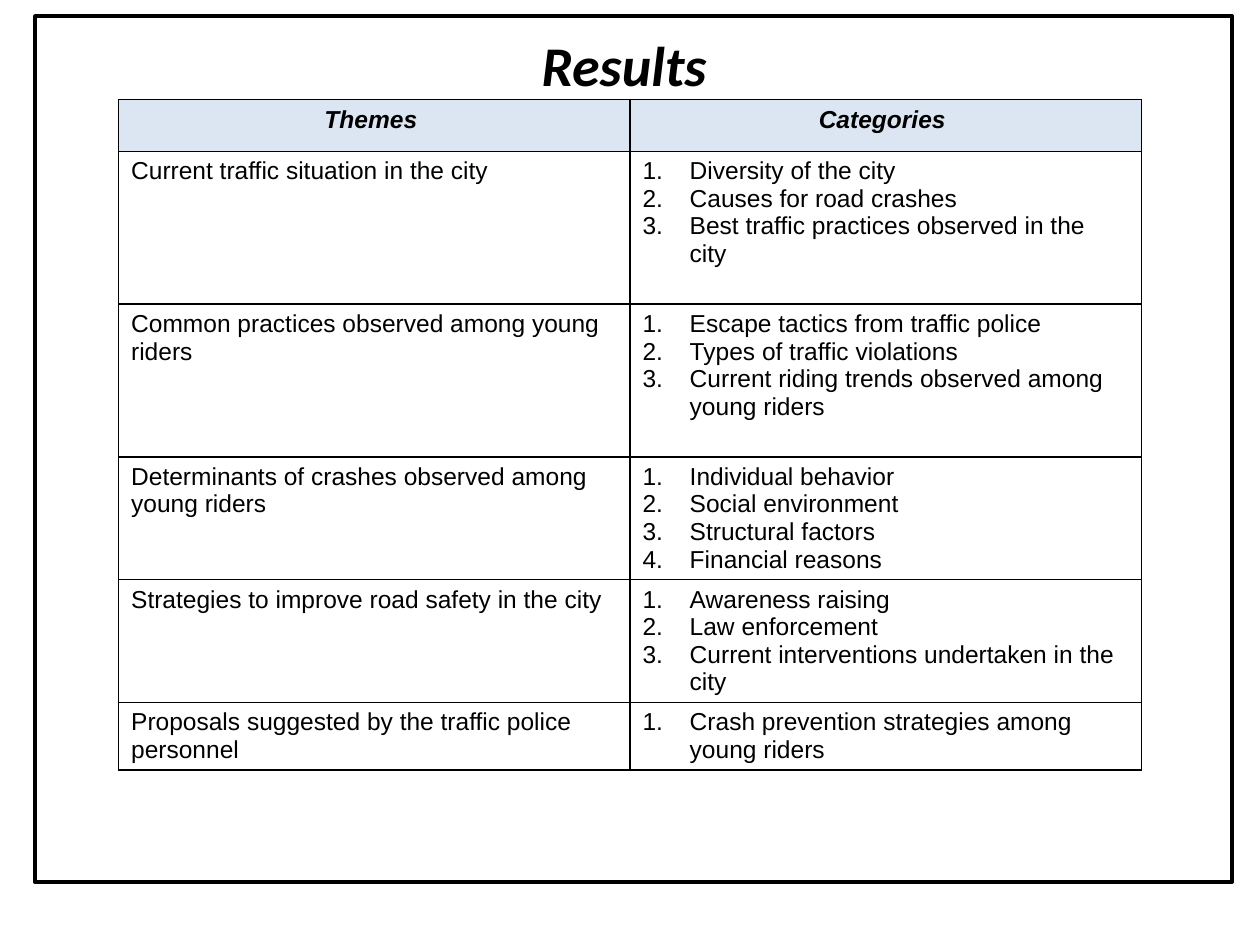
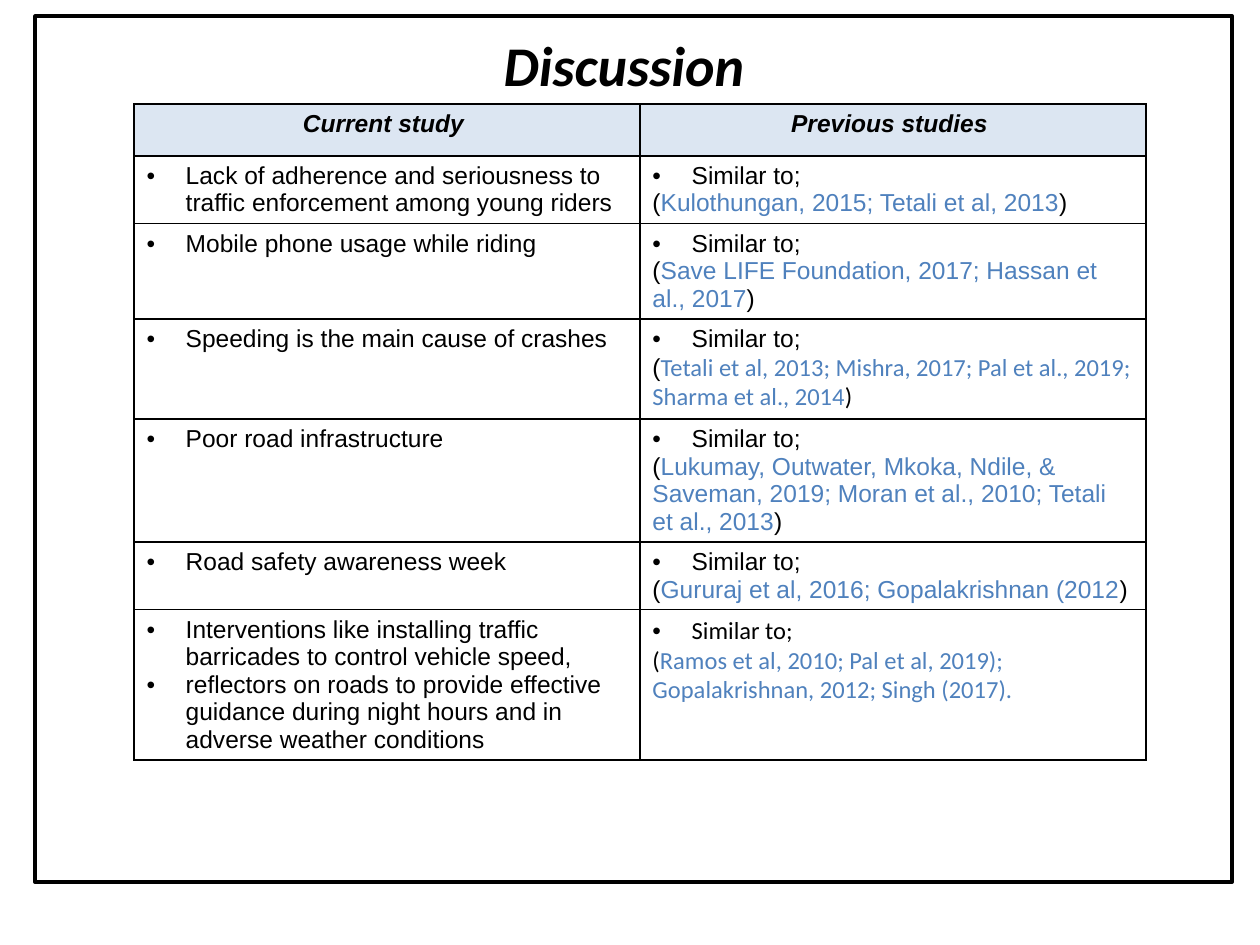
from dataclasses import dataclass

from lxml import etree
from pptx import Presentation
from pptx.dml.color import RGBColor
from pptx.enum.shapes import MSO_SHAPE
from pptx.enum.text import MSO_ANCHOR, MSO_AUTO_SIZE, PP_ALIGN
from pptx.oxml.ns import qn
from pptx.util import Cm, Pt

RECTANGLE = MSO_SHAPE.RECTANGLE
MIDDLE = MSO_ANCHOR.MIDDLE
NO_AUTOFIT = MSO_AUTO_SIZE.NONE
CENTER = PP_ALIGN.CENTER
LEFT = PP_ALIGN.LEFT
TITLE_ONLY = 5


@dataclass(frozen=True)
class Theme:
    ink: RGBColor = RGBColor(0x00, 0x00, 0x00)
    citation: RGBColor = RGBColor(0x4F, 0x81, 0xBD)
    header: RGBColor = RGBColor(0xDC, 0xE6, 0xF2)
    title_font: str = "Calibri"
    body_font: str = "Arial"
    title_size: Pt = Pt(32)
    body_size: Pt = Pt(14)
    frame_line: Pt = Pt(2.25)
    cell_line: Pt = Pt(1)


@dataclass(frozen=True)
class ListStyle:
    tag: str
    attributes: dict
    indent: Cm


THEME = Theme()
NUMBERED = ListStyle("a:buAutoNum", {"type": "arabicPeriod"}, Cm(0.95))
BULLETED = ListStyle("a:buChar", {"char": "•"}, Cm(0.79))
EMPHASIS = {"bold": True, "italic": True}
CITED = {"color": THEME.citation}
CALIBRI = {"name": THEME.title_font}


def plain(*texts):
    return [(None, [(text, {})]) for text in texts]


def numbered(*texts):
    return [(NUMBERED, [(text, {})]) for text in texts]


def bulleted(*texts):
    return [(BULLETED, [(text, {})]) for text in texts]


def similar(citation, opening={}, cited={}, closing=")"):
    spans = [("(", opening), (citation, CITED | cited)]
    if closing:
        spans.append((closing, cited))
    return [(BULLETED, [("Similar to;", opening)]), (None, spans)]


class DeckBuilder:
    def __init__(self, theme):
        self.theme = theme
        self.deck = Presentation()
        self.deck.slide_width = Cm(25.4)
        self.deck.slide_height = Cm(19.05)
        self.page = None

    def start_page(self, title):
        self.page = self.deck.slides.add_slide(self.deck.slide_layouts[TITLE_ONLY])
        self.frame()
        self.title(title)

    def frame(self):
        frame = self.page.shapes.add_shape(
            RECTANGLE, Cm(0.71), Cm(0.33), Cm(24.13), Cm(17.45)
        )
        frame.shadow.inherit = False
        frame.fill.background()
        frame.line.color.rgb = self.theme.ink
        frame.line.width = self.theme.frame_line

    def title(self, text):
        box = self.page.shapes.title
        place = {"left": Cm(0.71), "top": Cm(0.53), "width": Cm(24), "height": Cm(1.52)}
        for name, value in place.items():
            setattr(box, name, value)
        box.text_frame.auto_size = NO_AUTOFIT
        box.text_frame.vertical_anchor = MIDDLE
        para = box.text_frame.paragraphs[0]
        para.alignment = CENTER
        style = {"name": self.theme.title_font, "size": self.theme.title_size}
        self.span(para, text, style | EMPHASIS)

    def span(self, para, text, style):
        defaults = {
            "name": self.theme.body_font,
            "size": self.theme.body_size,
            "bold": False,
            "italic": False,
            "color": self.theme.ink,
        }
        values = defaults | style
        span = para.add_run()
        span.text = text
        span.font.color.rgb = values.pop("color")
        for name, value in values.items():
            setattr(span.font, name, value)

    def list_mark(self, para, style):
        properties = para._p.get_or_add_pPr()
        properties.set("marL", str(style.indent))
        properties.set("indent", str(-style.indent))
        etree.SubElement(properties, qn("a:buFont"), typeface=self.theme.body_font)
        etree.SubElement(properties, qn(style.tag), style.attributes)

    def borders(self, cell):
        properties = cell._tc.get_or_add_tcPr()
        for side in ("a:lnL", "a:lnR", "a:lnT", "a:lnB"):
            line = etree.SubElement(
                properties, qn(side), w=str(self.theme.cell_line)
            )
            fill = etree.SubElement(line, qn("a:solidFill"))
            etree.SubElement(fill, qn("a:srgbClr"), val=str(self.theme.ink))

    def cell(self, cell, paragraphs, alignment=LEFT):
        for index, (list_style, spans) in enumerate(paragraphs):
            frame = cell.text_frame
            para = frame.add_paragraph() if index else frame.paragraphs[0]
            para.alignment = alignment
            if list_style:
                self.list_mark(para, list_style)
            for text, style in spans:
                self.span(para, text, style)
        self.borders(cell)
        cell.fill.background()

    def table(self, left, top, column_width, row_heights, headings, rows):
        table = self.page.shapes.add_table(
            len(row_heights), len(headings), left, top,
            column_width * len(headings), sum(row_heights),
        ).table
        table.first_row = False
        table.horz_banding = False
        for column in table.columns:
            column.width = column_width
        for row, height in zip(table.rows, row_heights):
            row.height = height
        for column, heading in enumerate(headings):
            cell = table.cell(0, column)
            self.cell(cell, [(None, [(heading, EMPHASIS)])], CENTER)
            cell.fill.solid()
            cell.fill.fore_color.rgb = self.theme.header
        for row, contents in enumerate(rows, start=1):
            for column, paragraphs in enumerate(contents):
                self.cell(table.cell(row, column), paragraphs)


def results(builder):
    builder.start_page("Results ")
    heights = [Cm(h) for h in (1.04, 3.08, 3.08, 2.47, 2.47, 1.36)]
    rows = [
        (plain("Current traffic situation in the city"),
         numbered("Diversity of the city", "Causes for road crashes",
                  "Best traffic practices observed in the city")),
        (plain("Common practices observed among young riders"),
         numbered("Escape tactics from traffic police",
                  "Types of traffic violations",
                  "Current riding trends observed among young riders")),
        (plain("Determinants of crashes observed among young riders"),
         numbered("Individual behavior", "Social environment",
                  "Structural factors", "Financial reasons")),
        (plain("Strategies to improve road safety in the city"),
         numbered("Awareness raising", "Law enforcement",
                  "Current interventions undertaken in the city")),
        (plain("Proposals suggested by the traffic police personnel"),
         numbered("Crash prevention strategies among young riders")),
    ]
    builder.table(Cm(2.39), Cm(2.01), Cm(10.31), heights,
                  ("Themes ", "Categories "), rows)


def discussion(builder):
    builder.start_page("Discussion ")
    heights = [Cm(h) for h in (1.04, 1.37, 1.92, 2.02, 2.47, 1.36, 3.02)]
    rows = [
        (bulleted("Lack of adherence and seriousness to traffic enforcement "
                  "among young riders"),
         similar("Kulothungan, 2015; Tetali et al, 2013")),
        (bulleted("Mobile phone usage while riding"),
         similar("Save LIFE Foundation, 2017; Hassan et al., 2017")),
        (bulleted("Speeding is the main cause of crashes"),
         similar("Tetali et al, 2013; Mishra, 2017; Pal et al., 2019; "
                 "Sharma et al., 2014", cited=CALIBRI)),
        (bulleted("Poor road infrastructure"),
         similar("Lukumay, Outwater, Mkoka, Ndile, & Saveman, 2019; "
                 "Moran et al., 2010; Tetali et al., 2013")),
        (bulleted("Road safety awareness week"),
         similar("Gururaj et al, 2016; Gopalakrishnan (2012")),
        (bulleted("Interventions like installing traffic barricades to control "
                  "vehicle speed,",
                  "reflectors on roads to provide effective guidance during "
                  "night hours and in adverse weather conditions"),
         similar("Ramos et al, 2010; Pal et al, 2019); Gopalakrishnan, 2012; "
                 "Singh (2017).", CALIBRI, CALIBRI, closing="")),
    ]
    builder.table(Cm(2.7), Cm(2.1), Cm(10.2), heights,
                  ("Current study ", "Previous studies "), rows)


def main():
    builder = DeckBuilder(THEME)
    results(builder)
    discussion(builder)
    builder.deck.save("out.pptx")


if __name__ == "__main__":
    main()
